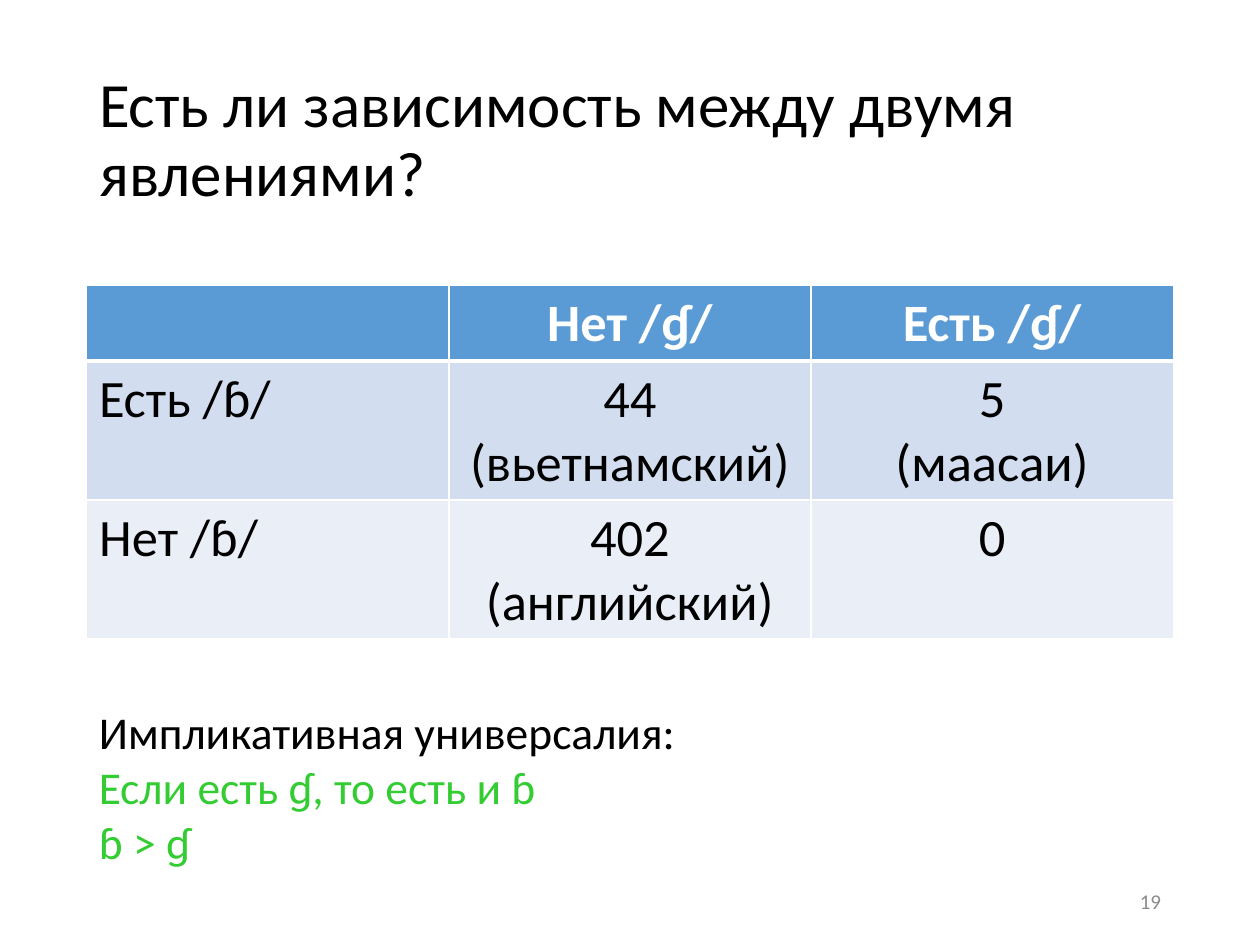
from dataclasses import dataclass

from lxml.etree import SubElement
from pptx import Presentation
from pptx.dml.color import RGBColor as RGB
from pptx.enum.text import MSO_ANCHOR as Anchor, MSO_AUTO_SIZE as AutoSize, PP_ALIGN as Align
from pptx.oxml.ns import qn
from pptx.util import Pt


@dataclass(frozen=True)
class Theme:
    font: str = "Calibri"
    title_size: int = 36
    table_size: int = 30
    body_size: int = 26
    number_size: int = 12
    ink: str = "000000"
    paper: str = "FFFFFF"
    accent: str = "33CC33"
    muted: str = "8C8C8C"
    header: str = "5B9BD5"
    bands: tuple = ("D2DEEF", "EAEFF7")
    rule: int = 1
    header_rule: int = 3


THEME = Theme()
LEFT, WIDTH = 49.5, 621

COUNTS = [
    ["", "Нет /ɠ/", "Есть /ɠ/"],
    ["Есть /ɓ/", "44\n(вьетнамский)", "5\n(маасаи)"],
    ["Нет /ɓ/", "402\n(английский)", "0"],
]
ROW_HEIGHTS = [42, 79.5, 79.5]


def place(shape, box):
    shape.left, shape.top, shape.width, shape.height = map(Pt, box)


def style(paragraph, size, color, align=Align.LEFT, bold=False):
    paragraph.alignment = align
    font = paragraph.font
    font.name, font.size, font.bold = THEME.font, Pt(size), bold
    font.color.rgb = RGB.from_string(color)


def add_title(slide, box, text):
    title = slide.shapes.title
    place(title, box)
    frame = title.text_frame
    frame.text = text
    frame.auto_size = AutoSize.NONE
    frame.vertical_anchor = Anchor.MIDDLE
    heading = frame.paragraphs[0]
    style(heading, THEME.title_size, THEME.ink)
    heading.line_spacing = 0.9


def add_borders(cell, top, bottom):
    properties = cell._tc.get_or_add_tcPr()
    for side, width in (("L", THEME.rule), ("R", THEME.rule), ("T", top), ("B", bottom)):
        line = SubElement(properties, qn(f"a:ln{side}"), w=str(Pt(width)))
        fill = SubElement(line, qn("a:solidFill"))
        SubElement(fill, qn("a:srgbClr"), val=THEME.paper)


def add_counts(slide, box):
    table = slide.shapes.add_table(len(COUNTS), len(COUNTS[0]), *map(Pt, box)).table
    for column in table.columns:
        column.width = Pt(box[2] / len(COUNTS[0]))
    for r, (labels, height) in enumerate(zip(COUNTS, ROW_HEIGHTS)):
        table.rows[r].height = Pt(height)
        is_header = r == 0
        background = THEME.header if is_header else THEME.bands[(r - 1) % 2]
        top = THEME.header_rule if r == 1 else THEME.rule
        bottom = THEME.header_rule if is_header else THEME.rule
        for c, label in enumerate(labels):
            cell = table.cell(r, c)
            add_borders(cell, top, bottom)
            cell.fill.solid()
            cell.fill.fore_color.rgb = RGB.from_string(background)
            cell.text = label
            for paragraph in cell.text_frame.paragraphs:
                style(paragraph, THEME.table_size, THEME.paper if is_header else THEME.ink,
                      Align.CENTER if c else Align.LEFT, is_header)


def add_text(slide, box, lines, size, align=Align.LEFT, anchor=Anchor.TOP):
    """Add a wrapping text box from (text, color) lines."""
    frame = slide.shapes.add_textbox(*map(Pt, box)).text_frame
    frame.word_wrap = True
    frame.vertical_anchor = anchor
    frame.text = "\n".join(text for text, _ in lines)
    for paragraph, (_, color) in zip(frame.paragraphs, lines):
        style(paragraph, size, color, align)


def add_conclusion(slide, box):
    add_text(slide, box, [
        ("Импликативная универсалия:", THEME.ink),
        ("Если есть ɠ, то есть и ɓ", THEME.accent),
        ("ɓ > ɠ", THEME.accent),
    ], THEME.body_size)


def add_page_number(slide, box, number):
    add_text(slide, box, [(number, THEME.muted)], THEME.number_size, Align.RIGHT, Anchor.MIDDLE)


def main():
    deck = Presentation()
    deck.slide_width, deck.slide_height = Pt(720), Pt(540)
    slide = deck.slides.add_slide(deck.slide_layouts.get_by_name("Title Only"))
    add_title(slide, (LEFT, 28.75, WIDTH, 104.4), "Есть ли зависимость между двумя явлениями?")
    add_conclusion(slide, (LEFT, 399, WIDTH, 101.5))
    add_counts(slide, (LEFT, 163, WIDTH, sum(ROW_HEIGHTS)))
    add_page_number(slide, (LEFT + WIDTH - 162, 500.5, 162, 28.75), "19")
    deck.save("out.pptx")


if __name__ == "__main__":
    main()
